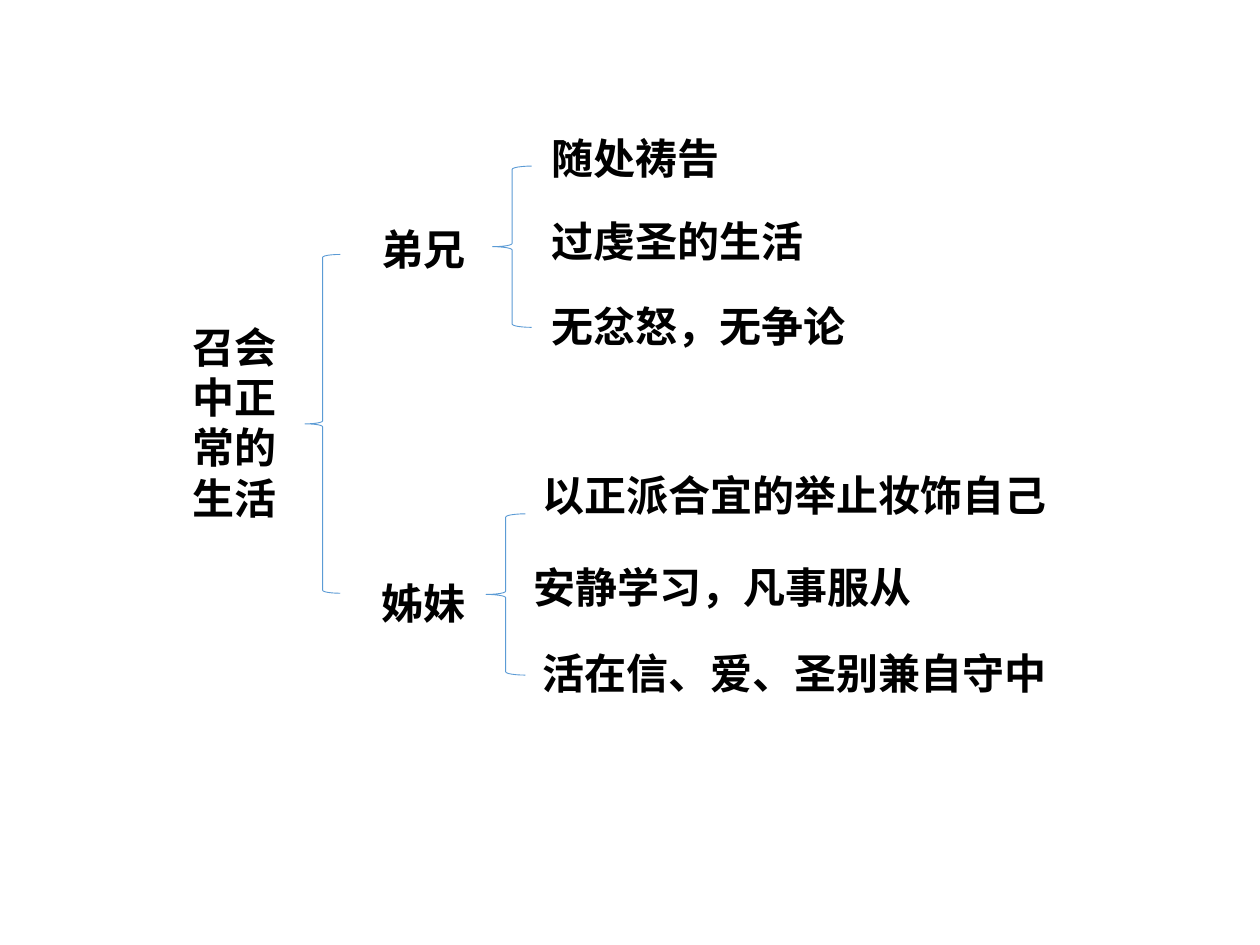
import pptx
import pptx.util
import pptx.dml.color
import pptx.enum.shapes
import pptx.enum.text

Cm = pptx.util.Cm
BLACK = pptx.dml.color.RGBColor(0x00, 0x00, 0x00)
BLUE = pptx.dml.color.RGBColor(0x5B, 0x9B, 0xD5)
FONT = "Calibri"
SIZE = 24
GLYPH = 0.85
INSET = 0.25
LINE = 1.27


def label(slide, text, left, top, width=None, height=LINE):
    """Place a bold label, on one line unless a width is given."""
    wide = width or len(text) * GLYPH + 2 * INSET
    box = slide.shapes.add_textbox(Cm(left), Cm(top), Cm(wide), Cm(height))
    frame = box.text_frame
    frame.word_wrap = width is not None
    frame.auto_size = pptx.enum.text.MSO_AUTO_SIZE.SHAPE_TO_FIT_TEXT
    run = frame.paragraphs[0].add_run()
    run.text = text
    run.font.name = FONT
    run.font.size = pptx.util.Pt(SIZE)
    run.font.bold = True
    run.font.color.rgb = BLACK


def brace(slide, left, top, width, height):
    """Draw a thin left brace."""
    kind = pptx.enum.shapes.MSO_SHAPE.LEFT_BRACE
    shape = slide.shapes.add_shape(kind, Cm(left), Cm(top), Cm(width), Cm(height))
    shape.shadow.inherit = False
    shape.fill.background()
    shape.line.color.rgb = BLUE
    shape.line.width = pptx.util.Pt(0.5)


def root(slide, left, top):
    """Place the theme and the brace that opens to both branches."""
    label(slide, "召会中正常的生活", left, top + 1.22, 2.29, 4.37)
    brace(slide, left + 2.52, top, 0.71, 6.83)


def branch(slide, left, top, name, drop, fork, items):
    """Place a group name, its brace and its points."""
    label(slide, name, left, top + drop)
    brace(slide, left + fork[0], top + fork[1], 0.79, 3.25)
    for text, right, down in items:
        label(slide, text, left + right, top + down)


def main():
    """Build and save the slide."""
    deck = pptx.Presentation()
    deck.slide_width = Cm(25.4)
    deck.slide_height = Cm(19.05)
    slide = deck.slides.add_slide(deck.slide_layouts[6])
    root(slide, 3.63, 5.13)
    branch(slide, 7.44, 2.54, "弟兄", 1.85, (2.49, 0.81), [
        ("随处祷告", 3.43, 0),
        ("过虔圣的生活", 3.43, 1.68),
        ("无忿怒，无争论", 3.43, 3.4),
    ])
    branch(slide, 7.44, 9.35, "姊妹", 2.16, (2.36, 1.01), [
        ("以正派合宜的举止妆饰自己", 3.25, 0),
        ("安静学习，凡事服从", 3.07, 1.85),
        ("活在信、爱、圣别兼自守中", 3.25, 3.58),
    ])
    deck.save("out.pptx")


if __name__ == "__main__":
    main()
